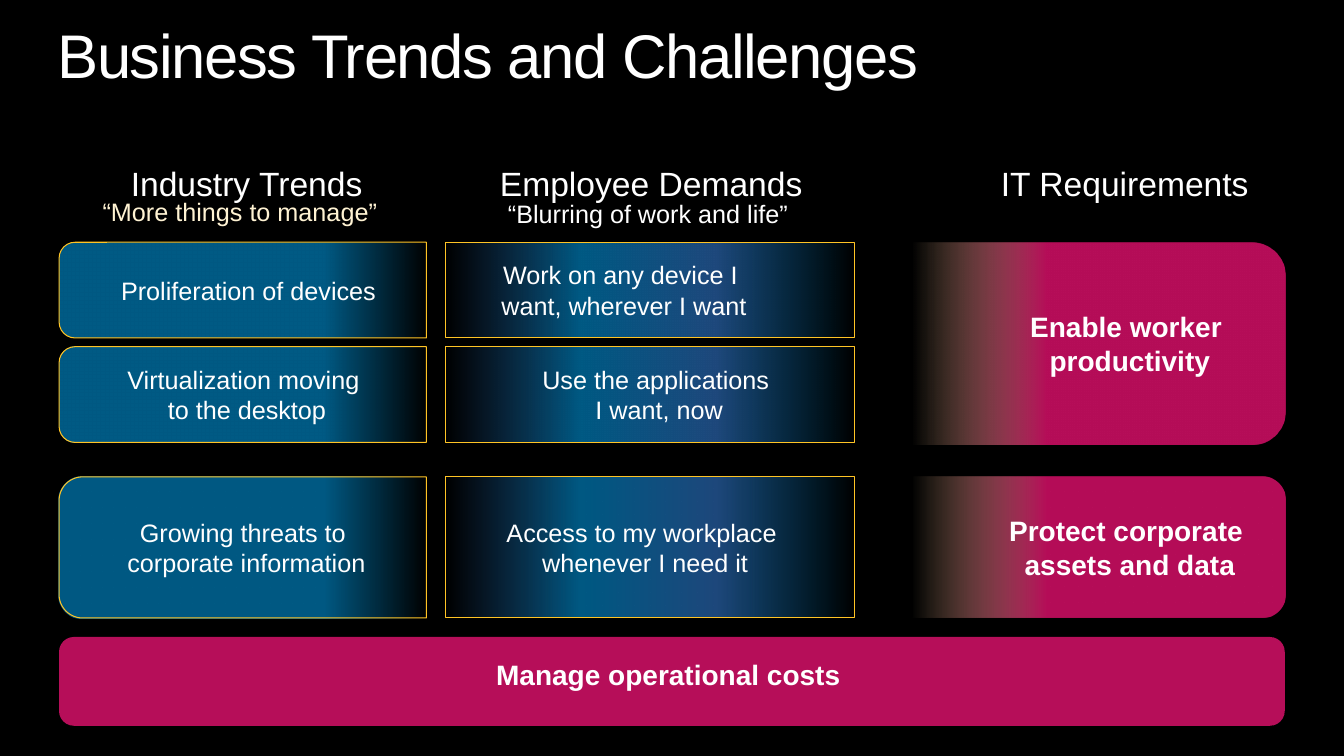
from dataclasses import dataclass

import lxml.etree
import pptx
import pptx.dml.color
import pptx.enum.shapes
import pptx.enum.text
import pptx.oxml.ns
import pptx.util

Pt = pptx.util.Pt
SHAPES = pptx.enum.shapes.MSO_SHAPE
ALIGN = pptx.enum.text.PP_ALIGN
AUTO_SIZE = pptx.enum.text.MSO_AUTO_SIZE
qn = pptx.oxml.ns.qn


@dataclass(frozen=True)
class Theme:
    font: str = "Arial"
    background: str = "000000"
    text: str = "FFFFFF"
    cream: str = "FFF3D3"
    gold: str = "FFC425"
    magenta: str = "B60E59"
    title_size: int = 44
    heading_size: int = 24
    strong_size: int = 20
    body_size: int = 18
    # Gradient stops: position in percent, colour, opacity in percent
    trend_stops: tuple = ((72, "005A84", 100), (100, "005A84", 0))
    demand_stops: tuple = ((0, "1F497D", 0), (33, "005A84", 100),
                           (66, "1F497D", 100), (100, "005A84", 0))
    requirement_stops: tuple = ((0, "FFDAA1", 0), (36, "B60E59", 100))


def rgb(value):
    return pptx.dml.color.RGBColor.from_string(value)


class SlideBuilder:
    def __init__(self, deck, theme):
        self.theme = theme
        self.page = deck.slides.add_slide(deck.slide_layouts[5])
        fill = self.page.background.fill
        fill.solid()
        fill.fore_color.rgb = rgb(theme.background)

    def format_text(self, frame, size, color=None, bold=False, align=ALIGN.LEFT):
        for para in frame.paragraphs:
            para.alignment = align
            for span in para.runs:
                span.font.name = self.theme.font
                span.font.size = Pt(size)
                span.font.bold = bold
                span.font.color.rgb = rgb(color or self.theme.text)

    def title(self, text, left, top, width, height):
        box = self.page.shapes.title
        box.left, box.top, box.width, box.height = map(Pt, (left, top, width, height))
        frame = box.text_frame
        frame.text = text
        frame.margin_left = frame.margin_right = 0
        frame.margin_top = frame.margin_bottom = 0
        frame.vertical_anchor = pptx.enum.text.MSO_ANCHOR.TOP
        frame.auto_size = AUTO_SIZE.SHAPE_TO_FIT_TEXT
        self.format_text(frame, self.theme.title_size)
        para = frame.paragraphs[0]
        para.line_spacing = 0.9
        para.runs[0].font._element.set("spc", "-100")

    def text_box(self, text, left, top, width, size, wrap=True, **style):
        """Add a text box whose height follows from its number of lines."""
        height = 1.2 * size * (text.count("\v") + 1) + 7.2
        box = self.page.shapes.add_textbox(*map(Pt, (left, top, width, height)))
        frame = box.text_frame
        frame.text = text
        frame.word_wrap = wrap
        frame.auto_size = AUTO_SIZE.SHAPE_TO_FIT_TEXT
        self.format_text(frame, size, **style)
        return box

    def label(self, text, center_x, center_y, width, size, bold=False):
        box = self.text_box(text, center_x - width / 2, 0, width, size,
                            wrap=False, bold=bold, align=ALIGN.CENTER)
        box.top = Pt(center_y) - box.height // 2

    def panel(self, kind, left, top, width, height, turn=0, line=None):
        """Add a shape that covers the given area after a turn in degrees."""
        if turn:
            left, top = left + (width - height) / 2, top + (height - width) / 2
            width, height = height, width
        shape = self.page.shapes.add_shape(kind, *map(Pt, (left, top, width, height)))
        shape.rotation = turn
        shape.shadow.inherit = False
        if line:
            shape.line.color.rgb = rgb(line)
            shape.line.width = Pt(0.75)
        else:
            shape.line.fill.background()
        return shape

    def solid_panel(self, kind, area, color):
        fill = self.panel(kind, *area).fill
        fill.solid()
        fill.fore_color.rgb = rgb(color)

    def gradient_panel(self, kind, area, stops, turn=0, line=None):
        """Add a panel whose colours run from its left side to its right side."""
        shape = self.panel(kind, *area, turn=turn, line=line)
        shape.fill.gradient()
        shape.fill.gradient_angle = turn
        stop_list = next(shape._element.iter(qn("a:gsLst")))
        for old_stop in list(stop_list):
            stop_list.remove(old_stop)
        for position, color, opacity in stops:
            stop = lxml.etree.SubElement(stop_list, qn("a:gs"), pos=str(position * 1000))
            tint = lxml.etree.SubElement(stop, qn("a:srgbClr"), val=color)
            lxml.etree.SubElement(tint, qn("a:alpha"), val=str(opacity * 1000))


def main():
    theme = Theme()
    deck = pptx.Presentation()
    deck.slide_width, deck.slide_height = Pt(960), Pt(540)
    slide = SlideBuilder(deck, theme)
    slide.title("Business Trends and Challenges", 41, 18, 878, 48)

    for text, left, width in (("Industry Trends", 86.4, 185),
                              ("Employee Demands", 350, 238.3),
                              ("IT Requirements", 707.8, 201.6)):
        slide.text_box(text, left, 113, width, theme.heading_size)
    slide.text_box("“More things to manage”", 66.2, 136.8, 220.3,
                   theme.body_size, color=theme.cream)
    slide.text_box("“Blurring of work and life”", 355.7, 138.2, 231.8, theme.body_size)

    # Each row: top, height, then text, centre and width of both labels
    rows = (
        (173, 68.4, ("Proliferation of devices", 177.5, 198),
         ("Work on any device I \vwant, wherever I want", 445.7, 191.5)),
        (247.6, 68.4, ("Virtualization moving \vto the desktop", 176.4, 187.2),
         ("Use the applications \vI want, now", 470.9, 182.9)),
        (340.6, 100.8, ("Growing threats to \vcorporate information", 176, 186.5),
         ("Access to my workplace \vwhenever I need it", 460.8, 214.6)),
    )
    for top, height, trend, demand in rows:
        slide.gradient_panel(SHAPES.ROUND_2_SAME_RECTANGLE, (42.2, top, 262.3, height),
                             theme.trend_stops, turn=270, line=theme.gold)
        slide.gradient_panel(SHAPES.RECTANGLE, (318.2, top, 292.3, height),
                             theme.demand_stops, line=theme.gold)
        for text, center_x, width in (trend, demand):
            slide.label(text, center_x, top + height / 2, width, theme.body_size)

    requirements = (
        ("Enable worker \vproductivity", 173, 144.8, 158.4),
        ("Protect corporate \vassets and data", 340.6, 100.8, 188.6),
    )
    for text, top, height, width in requirements:
        slide.gradient_panel(SHAPES.ROUND_2_SAME_RECTANGLE, (651.6, top, 266.4, height),
                             theme.requirement_stops, turn=90)
        slide.label(text, 807.1, top + height / 2, width, theme.strong_size, bold=True)

    slide.solid_panel(SHAPES.ROUNDED_RECTANGLE, (42.2, 455, 875.5, 63.4), theme.magenta)
    slide.label("Manage operational costs ", 480.2, 481.7, 267.8,
                theme.strong_size, bold=True)

    deck.save("out.pptx")


if __name__ == "__main__":
    main()
